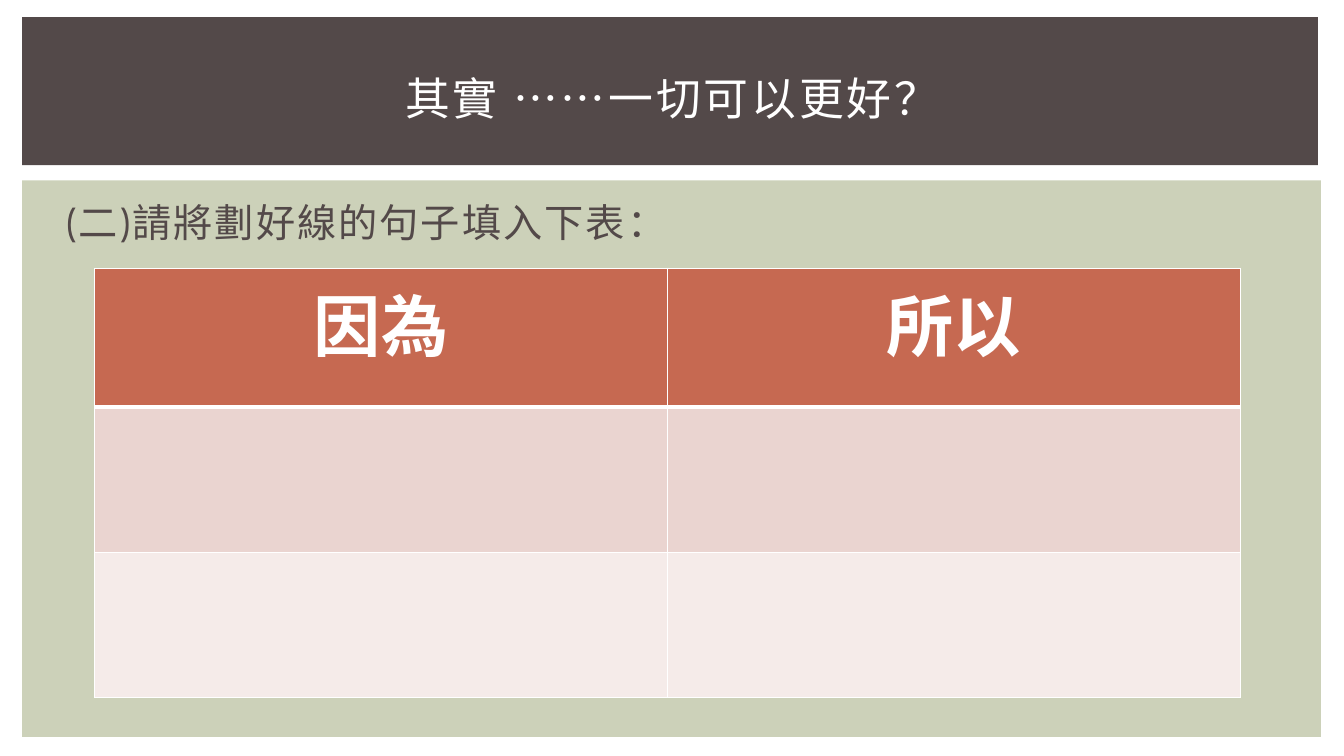
from dataclasses import dataclass
from lxml import etree
from pptx import Presentation
from pptx.dml.color import RGBColor
from pptx.enum.shapes import MSO_SHAPE
from pptx.enum.text import MSO_ANCHOR, PP_ALIGN
from pptx.oxml.ns import qn
from pptx.util import Inches, Pt

RECT = MSO_SHAPE.RECTANGLE
CENTER, LEFT = PP_ALIGN.CENTER, PP_ALIGN.LEFT
TOP, MIDDLE = MSO_ANCHOR.TOP, MSO_ANCHOR.MIDDLE


@dataclass(frozen=True)
class Theme:
    font: str = "Cabin"
    white: str = "FFFFFF"
    dark: str = "534949"
    sage: str = "CCD1B9"
    rows: tuple = ("C66951", "EAD4D0", "F5EBE9")
    title: int = 32
    body: int = 28
    header: int = 48


theme = Theme()


def set_text(p, text, size, color, align, bold=False, spacing=0):
    p.add_run().text = text
    p.alignment = align
    p.font.name = theme.font
    p.font.size = Pt(size)
    p.font.bold = bold
    p.font.color.rgb = RGBColor.from_string(color)
    p._p.pPr.find(qn("a:defRPr")).set("spc", str(int(spacing * 100)))


def add_border(cell, index, side, width):
    ln = etree.Element(qn(f"a:{side}"), w=str(Pt(width)))
    fill = etree.SubElement(ln, qn("a:solidFill"))
    etree.SubElement(fill, qn("a:srgbClr"), val=theme.white)
    cell._tc.get_or_add_tcPr().insert(index, ln)


prs = Presentation()
prs.slide_width, prs.slide_height = Inches(13.33), Inches(7.5)
s = prs.slides.add_slide(prs.slide_layouts[6])

# Background panels
for x, y, w, h, color in (
    (0.22, 1.79, 12.88, 5.52, theme.sage),
    (0.22, 0.17, 12.85, 1.47, theme.dark),
):
    sp = s.shapes.add_shape(RECT, Inches(x), Inches(y), Inches(w), Inches(h))
    sp.shadow.inherit = False
    sp.fill.solid()
    sp.fill.fore_color.rgb = RGBColor.from_string(color)
    sp.line.fill.background()

# Instruction and title
for x, y, w, h, text, size, color, align, anchor, spacing, inset in (
    (0.51, 1.92, 12.26, 0.7, "(二)請將劃好線的句子填入下表：",
     theme.body, theme.dark, LEFT, TOP, 1.5, 0.15),
    (0.56, 0.39, 12.22, 1.15, "其實 ……一切可以更好？",
     theme.title, theme.white, CENTER, MIDDLE, 2, 0.1),
):
    tf = s.shapes.add_textbox(Inches(x), Inches(y), Inches(w), Inches(h)).text_frame
    tf.word_wrap = True
    tf.vertical_anchor = anchor
    tf.margin_left = Inches(inset)
    set_text(tf.paragraphs[0], text, size, color, align, spacing=spacing)

# Cause and effect table
table = s.shapes.add_table(
    3, 2, Inches(0.94), Inches(2.66), Inches(11.36), Inches(4.26)).table
for row, height in zip(table.rows, (1.38, 1.44, 1.44)):
    row.height = Inches(height)
for r, color in enumerate(theme.rows):
    for cell in table.rows[r].cells:
        cell.fill.solid()
        cell.fill.fore_color.rgb = RGBColor.from_string(color)
        widths = {"lnL": 1, "lnR": 1, "lnT": 3 if r == 1 else 1, "lnB": 3 if r == 0 else 1}
        for i, (side, width) in enumerate(widths.items()):
            add_border(cell, i, side, width)
for cell, text in zip(table.rows[0].cells, ("因為", "所以")):
    set_text(cell.text_frame.paragraphs[0], text, theme.header, theme.white, CENTER, bold=True)

prs.save("out.pptx")
